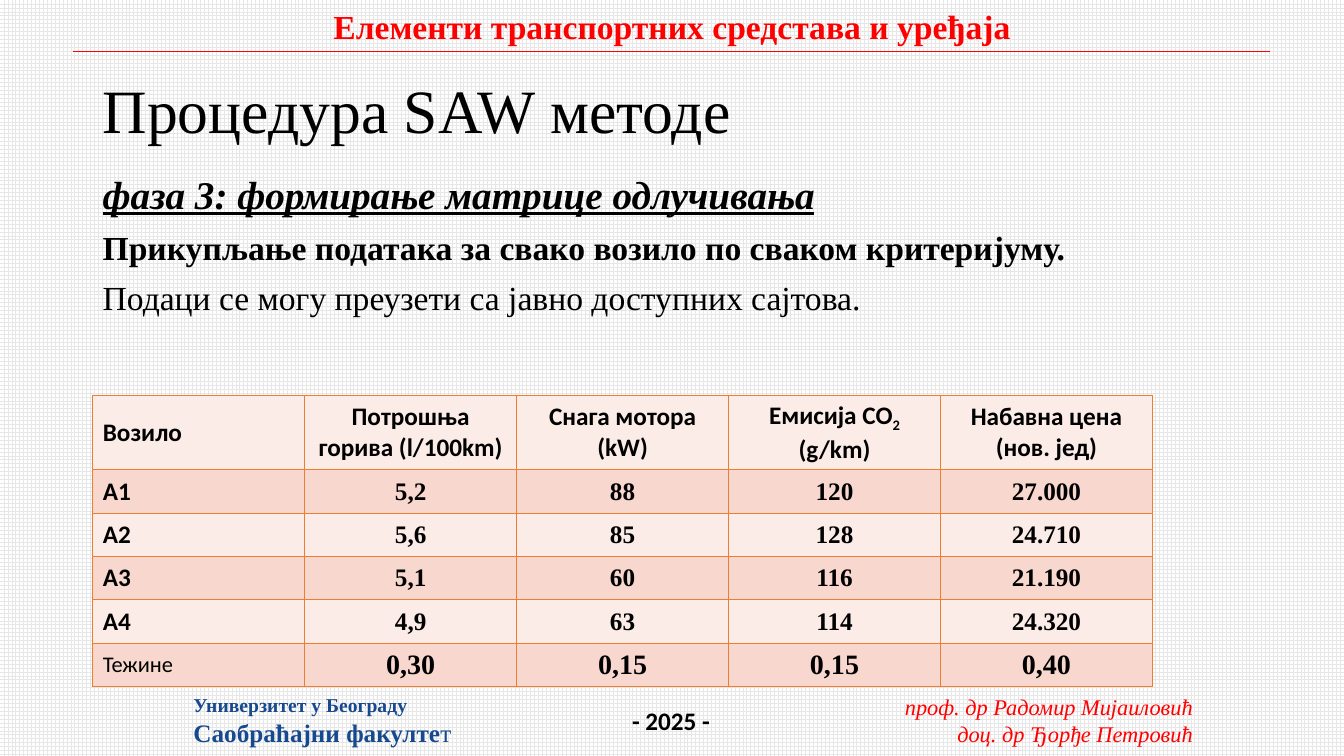
"""Build the slide on the decision matrix phase of the SAW method."""
from dataclasses import dataclass

from lxml import etree
from pptx import Presentation
from pptx import util as u
from pptx.dml.color import RGBColor
from pptx.enum import dml, shapes, text
from pptx.oxml import ns


@dataclass(frozen=True)
class Theme:
    """Hold the colours, fonts and type sizes of the slide."""
    serif: str = "Times New Roman"
    sans: str = "Calibri"
    black: str = "000000"
    red: str = "FF0000"
    blue: str = "16498E"
    grid: str = "E7E6E6"
    paper: str = "FFFFFF"
    border: str = "ED7D31"
    pale: str = "FCECE8"
    tint: str = "F8D7CE"
    title: int = 44
    phase: int = 28
    lead: int = 24
    weight: int = 20
    normal: int = 18
    small: int = 16
    caption: int = 14


THEME = Theme()
LEFT, CENTER, RIGHT = text.PP_ALIGN.LEFT, text.PP_ALIGN.CENTER, text.PP_ALIGN.RIGHT


@dataclass(frozen=True)
class Span:
    """Describe a stretch of text in one format."""
    words: str
    size: int = THEME.normal
    font: str = THEME.serif
    color: str = THEME.black
    bold: bool = False
    italic: bool = False
    underline: bool = False
    baseline: int = 0


@dataclass(frozen=True)
class TextBox:
    """Describe a text box with one list of spans per paragraph."""
    left: float
    top: float
    width: float
    height: float
    paragraphs: list[list[Span]]
    align: text.PP_ALIGN = LEFT
    wrap: bool = False
    middle: bool = False
    line_spacing: float = 1.0
    space_before: int = 0


BOXES = [
    TextBox(8.83, 6.83, 3.1, 0.64, [
        [Span(name, THEME.small, color=THEME.red, italic=True)]
        for name in ("проф. др Радомир Мијаиловић", "доц. др Ђорђе Петровић")
    ], align=RIGHT),
    TextBox(3.17, 0.01, 6.99, 0.5, [
        [Span("Елементи транспортних средстава и уређаја", THEME.lead, color=THEME.red, bold=True)],
    ], align=CENTER),
    TextBox(6.17, 6.95, 0.98, 0.4, [[Span("- 2025 -", font=THEME.sans, bold=True)]]),
    TextBox(1.82, 6.83, 2.79, 0.64, [
        [Span("Универзитет у Београду", THEME.caption, color=THEME.blue, bold=True)],
        [Span("Саобраћајни факулте", color=THEME.blue, bold=True), Span("т", color=THEME.blue)],
    ]),
    TextBox(0.92, 0.4, 11.5, 1.45, [[Span("Процедура SAW методе", THEME.title)]],
            wrap=True, middle=True, line_spacing=0.9),
    TextBox(0.92, 1.69, 11.5, 5.06, [
        [Span("фаза 3: формирање матрице одлучивања", THEME.phase,
              bold=True, italic=True, underline=True)],
        [Span("Прикупљање података за свако возило по сваком критеријуму.", THEME.lead, bold=True)],
        [Span("Подаци се могу преузети са јавно доступних сајтова.", THEME.lead)],
    ], wrap=True, line_spacing=0.9, space_before=10),
]

HEADINGS = [
    [("Возило", 0)],
    [("Потрошња горива (l/100km)", 0)],
    [("Снага мотора (kW)", 0)],
    [("Емисија CO", 0), ("2 ", -25000), ("(g/km)", 0)],
    [("Набавна цена (нов. јед)", 0)],
]
VEHICLES = [
    ("А1", "5,2", "88", "120", "27.000"),
    ("А2", "5,6", "85", "128", "24.710"),
    ("А3", "5,1", "60", "116", "21.190"),
    ("А4", "4,9", "63", "114", "24.320"),
]
WEIGHTS = ("Тежине", "0,30", "0,15", "0,15", "0,40")


def write_spans(para, spans: list[Span], align: text.PP_ALIGN) -> None:
    """Fill a paragraph with formatted spans."""
    para.alignment = align
    for span in spans:
        run = para.add_run()
        run.text = span.words
        run.font.size = u.Pt(span.size)
        run.font.name = span.font
        run.font.color.rgb = RGBColor.from_string(span.color)
        run.font.bold = span.bold
        run.font.italic = span.italic
        run.font.underline = span.underline
        if span.baseline:
            run.font._element.set("baseline", str(span.baseline))


def draw_box(page, box: TextBox) -> None:
    """Draw one text box."""
    place = map(u.Inches, (box.left, box.top, box.width, box.height))
    frame = page.shapes.add_textbox(*place).text_frame
    frame.word_wrap = box.wrap
    frame.auto_size = text.MSO_AUTO_SIZE.NONE if box.wrap else text.MSO_AUTO_SIZE.SHAPE_TO_FIT_TEXT
    frame.vertical_anchor = text.MSO_ANCHOR.MIDDLE if box.middle else text.MSO_ANCHOR.TOP
    for index, spans in enumerate(box.paragraphs):
        para = frame.add_paragraph() if index else frame.paragraphs[0]
        para.line_spacing = box.line_spacing
        para.space_before = u.Pt(box.space_before if index else 0)
        write_spans(para, spans, box.align)


def draw_rule(page) -> None:
    """Draw the line under the course name."""
    rule = page.shapes.add_connector(
        shapes.MSO_CONNECTOR.STRAIGHT, *map(u.Inches, (0.72, 0.51, 12.6, 0.51)))
    rule.line.color.rgb = RGBColor.from_string(THEME.red)
    rule.line.width = u.Pt(0.5)
    etree.SubElement(rule._element.spPr, ns.qn("a:effectLst"))


def border_cell(cell) -> None:
    """Put a thin border on all four sides of a cell."""
    properties = cell._tc.get_or_add_tcPr()
    for index, side in enumerate(("lnL", "lnR", "lnT", "lnB")):
        line = etree.Element(ns.qn(f"a:{side}"), w=str(u.Pt(1)))
        fill = etree.SubElement(line, ns.qn("a:solidFill"))
        etree.SubElement(fill, ns.qn("a:srgbClr"), val=THEME.border)
        properties.insert(index, line)


def matrix_rows() -> list[list[list[Span]]]:
    """Return the spans of every cell of the decision matrix."""
    heading = [[Span(words, font=THEME.sans, bold=True, baseline=baseline)
                for words, baseline in parts] for parts in HEADINGS]
    vehicles = [[[Span(name, font=THEME.sans, bold=True)]]
                + [[Span(value, bold=True)] for value in values]
                for name, *values in VEHICLES]
    label, *values = WEIGHTS
    weights = [[Span(label, THEME.small, THEME.sans)]]
    weights += [[Span(value, THEME.weight, bold=True)] for value in values]
    return [heading, *vehicles, weights]


def draw_matrix(page) -> None:
    """Draw the decision matrix as a table."""
    rows = matrix_rows()
    place = map(u.Inches, (0.92, 3.92, 10.51, 2.83))
    table = page.shapes.add_table(len(rows), len(HEADINGS), *place).table
    table.first_row = table.horz_banding = False
    for row_index, row in enumerate(rows):
        table.rows[row_index].height = u.Inches(0.43 if row_index else 0.69)
        for column_index, spans in enumerate(row):
            cell = table.cell(row_index, column_index)
            cell.vertical_anchor = text.MSO_ANCHOR.MIDDLE
            if row_index and column_index:
                cell.margin_left = cell.margin_right = u.Inches(0.07)
                cell.margin_top = cell.margin_bottom = 0
            cell.fill.solid()
            color = THEME.tint if row_index % 2 else THEME.pale
            cell.fill.fore_color.rgb = RGBColor.from_string(color)
            border_cell(cell)
            write_spans(cell.text_frame.paragraphs[0], spans, CENTER if column_index else LEFT)


def main() -> None:
    """Build and save the deck."""
    deck = Presentation()
    deck.slide_width, deck.slide_height = u.Inches(13.33), u.Inches(7.5)
    page = deck.slides.add_slide(deck.slide_layouts[6])
    backdrop = page.background.fill
    backdrop.patterned()
    backdrop.pattern = dml.MSO_PATTERN.LARGE_GRID
    backdrop.fore_color.rgb = RGBColor.from_string(THEME.grid)
    backdrop.back_color.rgb = RGBColor.from_string(THEME.paper)
    draw_rule(page)
    for box in BOXES:
        draw_box(page, box)
    draw_matrix(page)
    deck.save("out.pptx")


if __name__ == "__main__":
    main()
